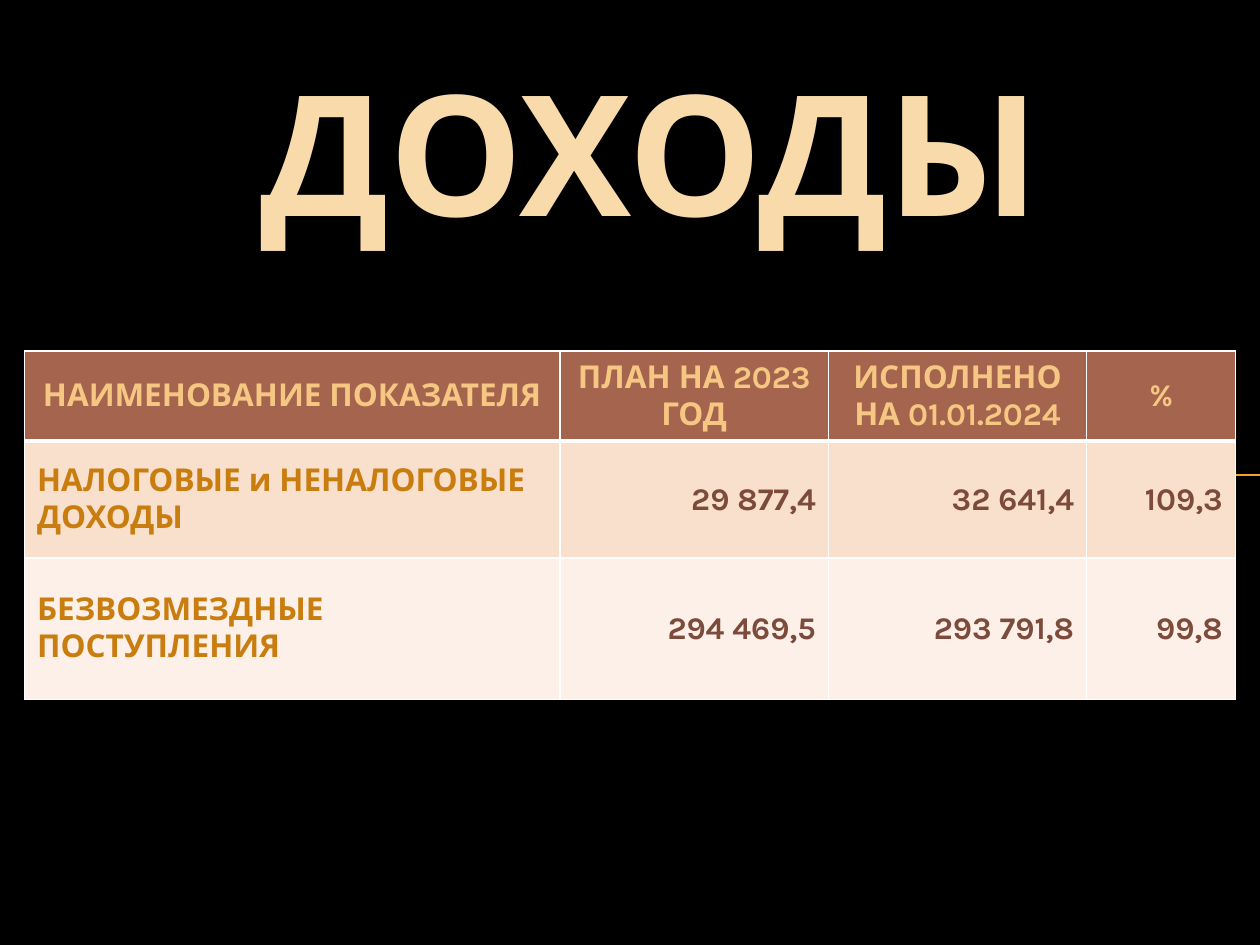
import pptx
import pptx.util
import pptx.dml.color
import pptx.enum.text
import pptx.enum.shapes
import pptx.oxml.ns
import lxml.etree

Pt = pptx.util.Pt
Align = pptx.enum.text.PP_ALIGN
Mid = pptx.enum.text.MSO_ANCHOR.MIDDLE
qn = pptx.oxml.ns.qn


def paint(fill, tint):
    fill.solid()
    fill.fore_color.rgb = pptx.dml.color.RGBColor.from_string(tint)


def write(frame, text, size, tint, align):
    para = frame.paragraphs[0]
    para.alignment = align
    run = para.add_run()
    run.text = text
    look = {"name": "Karla", "size": Pt(size), "bold": True}
    for key, value in look.items():
        setattr(run.font, key, value)
    paint(run.font.fill, tint)
    return run


deck = pptx.Presentation()
deck.slide_width, deck.slide_height = Pt(720), Pt(540)
slide = deck.slides.add_slide(deck.slide_layouts[6])
paint(slide.background.fill, "000000")

rule = slide.shapes.add_connector(
    pptx.enum.shapes.MSO_CONNECTOR.STRAIGHT, Pt(40.5), Pt(271.5), Pt(720), Pt(271.5))
paint(rule.line.fill, "F0A22E")
rule.line.width = Pt(0.75)
props = rule._element.spPr
lxml.etree.SubElement(props, qn("a:effectLst"))

title = slide.shapes.add_textbox(Pt(65.5), Pt(31.7), Pt(612), Pt(107.3))
frame = title.text_frame
form = {"word_wrap": True, "vertical_anchor": Mid}
for key, value in form.items():
    setattr(frame, key, value)
run = write(frame, "ДОХОДЫ", 96, "F9DAAB", Align.CENTER)
edge = lxml.etree.Element(qn("a:ln"), w=str(Pt(0.15)))
solid = lxml.etree.SubElement(edge, qn("a:solidFill"))
lxml.etree.SubElement(solid, qn("a:srgbClr"), val="C87D0E")
run.font._element.insert(0, edge)

rows = [
    ["НАИМЕНОВАНИЕ ПОКАЗАТЕЛЯ", "ПЛАН НА 2023 ГОД", "ИСПОЛНЕНО НА 01.01.2024", "%"],
    ["НАЛОГОВЫЕ и НЕНАЛОГОВЫЕ ДОХОДЫ", "29 877,4", "32 641,4", "109,3"],
    ["БЕЗВОЗМЕЗДНЫЕ ПОСТУПЛЕНИЯ", "294 469,5", "293 791,8", "99,8"],
]
wides = [306, 153.4, 147.6, 85]
highs = [51.3, 67, 80.7]
fills = ["A5644E", "F9E0CD", "FCF0E8"]

table = slide.shapes.add_table(
    len(rows), len(wides), Pt(14), Pt(200.7), Pt(sum(wides)), Pt(sum(highs))).table
for col, wide in zip(table.columns, wides):
    col.width = Pt(wide)
for row, high in zip(table.rows, highs):
    row.height = Pt(high)

for r, row in enumerate(rows):
    for c, text in enumerate(row):
        cell = table.cell(r, c)
        cell.vertical_anchor = Mid
        paint(cell.fill, fills[r])
        if r == 0:
            tint, align = "F6C782", Align.CENTER
        elif c == 0:
            tint, align = "C87D0E", Align.LEFT
        else:
            tint, align = "7C4B3B", Align.RIGHT
        write(cell.text_frame, text, 18, tint, align)
        thick = {"L": 1, "R": 1, "T": 3 if r == 1 else 1, "B": 3 if r == 0 else 1}
        props = cell._tc.get_or_add_tcPr()
        for i, (side, width) in enumerate(thick.items()):
            edge = lxml.etree.Element(qn("a:ln" + side), w=str(Pt(width)))
            solid = lxml.etree.SubElement(edge, qn("a:solidFill"))
            lxml.etree.SubElement(solid, qn("a:srgbClr"), val="FFFFFF")
            props.insert(i, edge)

deck.save("out.pptx")
